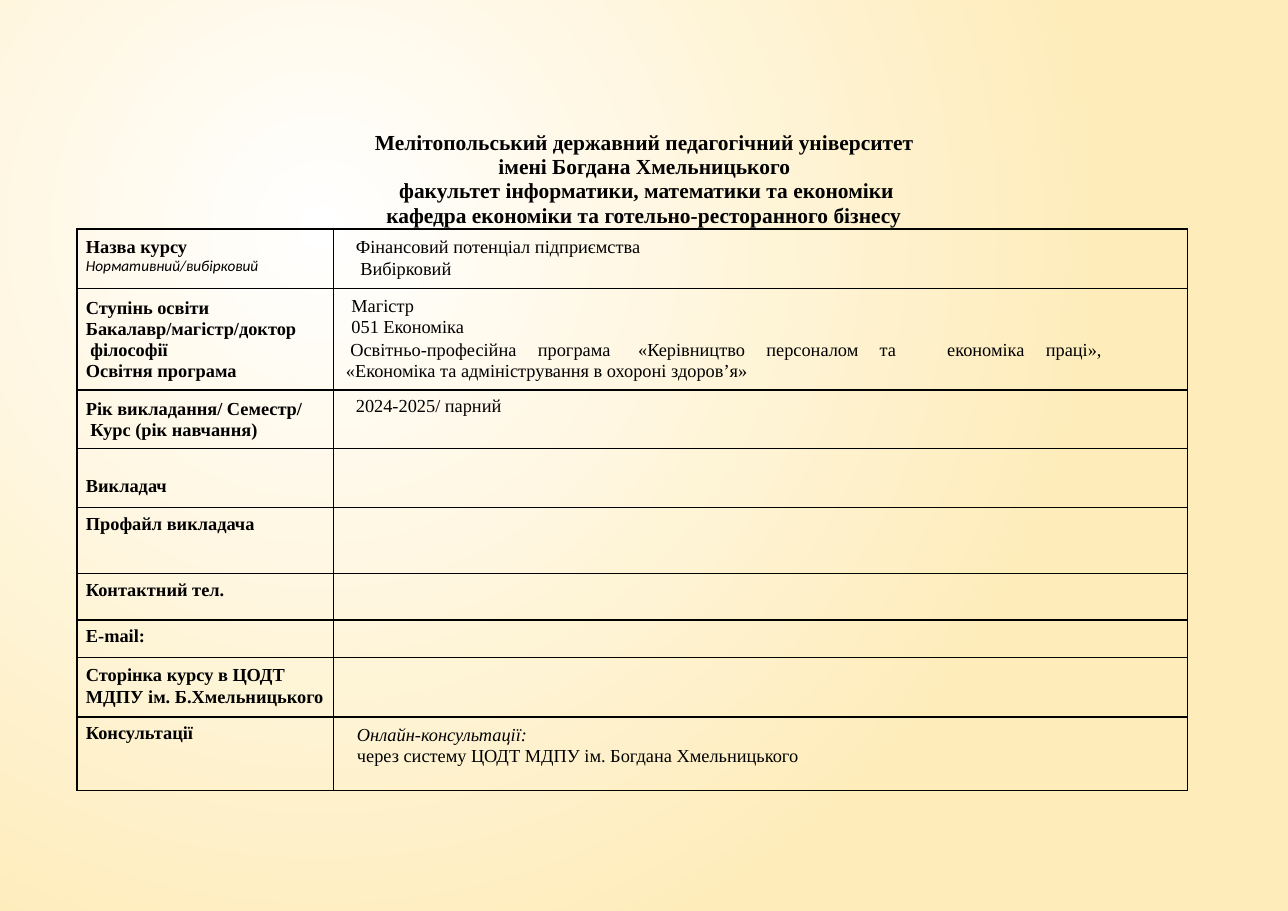
from lxml import etree
from pptx import Presentation
from pptx.dml.color import RGBColor
from pptx.enum.text import MSO_ANCHOR as ANCHOR, MSO_AUTO_SIZE as FIT, PP_ALIGN as AL
from pptx.oxml import parse_xml
from pptx.oxml.ns import nsdecls, qn
from pptx.util import Inches, Pt

BLACK = RGBColor(0, 0, 0)
WHITE = RGBColor(0xFF, 0xFF, 0xFF)
CREAM = RGBColor(0xFE, 0xEC, 0xBA)
SERIF = "Times New Roman"
COLS = (2.33, 7.75)
LABEL = dict(bold=True, left=0.08)
TABS = (2.6, 4.98)

HEADING = [
    ("Мелітопольський державний педагогічний університет", dict(left=0.01, spacing=16.1)),
    ("імені Богдана Хмельницького", dict(left=0.01, spacing=16.1)),
    ("факультет інформатики, математики та економіки", dict(left=0.05, spacing=15.3)),
    ("кафедра економіки та готельно-ресторанного бізнесу", dict(spacing=16.4)),
]

ROWS = [
    (0.54,
     (0.06, [("Назва курсу", dict(LABEL, spacing=14.3)),
             ("Нормативний/вибірковий",
              dict(left=0.08, size=10, font="Calibri", italic=True, spacing=11.9))]),
     (0.07, [("Фінансовий потенціал підприємства", dict(left=0.2, spacing=13.8)),
             ("Вибірковий", dict(left=0.24, spacing=13.8))])),
    (0.92,
     (0.08, [("Ступінь освіти", dict(LABEL, spacing=13.8)),
             ("Бакалавр/магістр/доктор", dict(LABEL, spacing=13.8)),
             ("філософії", dict(LABEL, left=0.12, spacing=13.8)),
             ("Освітня програма", dict(LABEL, spacing=13.4))]),
     (0.06, [("Магістр", dict(left=0.16, spacing=14.1)),
             ("051 Економіка", dict(left=0.16, spacing=13.8)),
             ("Освітньо-професійна програма\t«Керівництво персоналом та\t"
              "економіка праці», «Економіка та адміністрування в охороні здоров’я»",
              dict(left=0.11, first=0.04, right=0.78, spacing=13.8, before=0.7,
                   align=AL.JUSTIFY, tabs=TABS))])),
    (0.53,
     (0.08, [("Рік викладання/ Семестр/", dict(LABEL, spacing=13.8)),
             ("Курс (рік навчання)", dict(LABEL, left=0.12, spacing=13.8))]),
     (0.06, [("2024-2025/ парний", dict(left=0.2))])),
    (0.54, (0.25, [("Викладач", LABEL)]), None),
    (0.6, (0.06, [("Профайл викладача", LABEL)]), None),
    (0.42, (0.06, [("Контактний тел.", LABEL)]), None),
    (0.34, (0.06, [("E-mail:", LABEL)]), None),
    (0.54,
     (0.06, [("Сторінка курсу в ЦОДТ", dict(LABEL, spacing=14.1)),
             ("МДПУ ім. Б.Хмельницького", dict(LABEL, spacing=14.1))]),
     None),
    (0.67,
     (0.06, [("Консультації", LABEL)]),
     (0.06, [("Онлайн-консультації:", dict(left=0.21, italic=True, spacing=14.1)),
             ("через систему ЦОДТ МДПУ ім. Богдана Хмельницького",
              dict(left=0.21, spacing=14.1))])),
]


def write(p, text, size=12, font=SERIF, bold=False, italic=False, align=AL.LEFT,
          left=0, first=0, right=0, spacing=None, before=0, tabs=()):
    """Fill a paragraph with one formatted run."""
    p.alignment = align
    p.space_before = Pt(before)
    if spacing:
        p.line_spacing = Pt(spacing)
    ppr = p._p.get_or_add_pPr()
    for name, value in (("marL", left), ("indent", first), ("marR", right)):
        ppr.set(name, str(Inches(value)))
    if tabs:
        stops = etree.SubElement(ppr, qn("a:tabLst"))
        for pos in tabs:
            etree.SubElement(stops, qn("a:tab"), pos=str(Inches(pos)), algn="l")
    r = p.add_run()
    r.text = text
    r.font.size = Pt(size)
    r.font.name = font
    r.font.bold = bold
    r.font.italic = italic
    r.font.color.rgb = BLACK


def write_lines(tf, lines, **common):
    """Write each line as its own paragraph."""
    for i, (text, fmt) in enumerate(lines):
        p = tf.add_paragraph() if i else tf.paragraphs[0]
        write(p, text, **common, **fmt)


def set_background(s):
    """Give the slide a radial gradient."""
    bg = parse_xml(
        f'<p:bg {nsdecls("p", "a")}><p:bgPr><a:gradFill rotWithShape="1"><a:gsLst>'
        f'<a:gs pos="0"><a:srgbClr val="{WHITE}"/></a:gs>'
        f'<a:gs pos="100000"><a:srgbClr val="{CREAM}"/></a:gs></a:gsLst>'
        '<a:path path="circle"><a:fillToRect l="50000" t="50000" r="100000" b="100000"/>'
        '</a:path></a:gradFill><a:effectLst/></p:bgPr></p:bg>')
    s.element.cSld.insert(0, bg)


def add_heading(s):
    """Place the heading in the title placeholder."""
    sp = s.shapes.title
    sp.left, sp.top, sp.width, sp.height = map(Inches, (3.38, 1.15, 4.93, 0.93))
    tf = sp.text_frame
    tf.word_wrap = True
    tf.auto_size = FIT.NONE
    tf.vertical_anchor = ANCHOR.TOP
    tf.margin_left = tf.margin_right = tf.margin_bottom = 0
    tf.margin_top = Inches(0.03)
    write_lines(tf, HEADING, size=14, bold=True, align=AL.CENTER)


def set_borders(cell):
    """Draw thin black lines on all four sides of a cell."""
    tcpr = cell._tc.get_or_add_tcPr()
    for i, side in enumerate(("lnL", "lnR", "lnT", "lnB")):
        tcpr.insert(i, parse_xml(
            f'<a:{side} {nsdecls("a")} w="{Pt(1)}"><a:solidFill>'
            f'<a:srgbClr val="{BLACK}"/></a:solidFill></a:{side}>'))


def fill_cell(cell, content):
    """Format a cell and write its lines."""
    top, lines = content or (0, [])
    cell.margin_left = cell.margin_right = cell.margin_bottom = 0
    cell.margin_top = Inches(top)
    cell.vertical_anchor = ANCHOR.TOP
    set_borders(cell)
    cell.fill.background()
    write_lines(cell.text_frame, lines)


def add_course_table(s):
    """Add the table of course details."""
    height = sum(row[0] for row in ROWS)
    table = s.shapes.add_table(len(ROWS), len(COLS), Inches(0.7), Inches(2.08),
                               Inches(sum(COLS)), Inches(height)).table
    table.first_row = table.horz_banding = False
    for col, width in zip(table.columns, COLS):
        col.width = Inches(width)
    for row, (row_height, *contents) in zip(table.rows, ROWS):
        row.height = Inches(row_height)
        for cell, content in zip(row.cells, contents):
            fill_cell(cell, content)


def main():
    """Build and save the slide."""
    prs = Presentation()
    prs.slide_width, prs.slide_height = Inches(11.69), Inches(8.27)
    s = prs.slides.add_slide(prs.slide_layouts[5])
    set_background(s)
    add_heading(s)
    add_course_table(s)
    prs.save("out.pptx")


if __name__ == "__main__":
    main()
